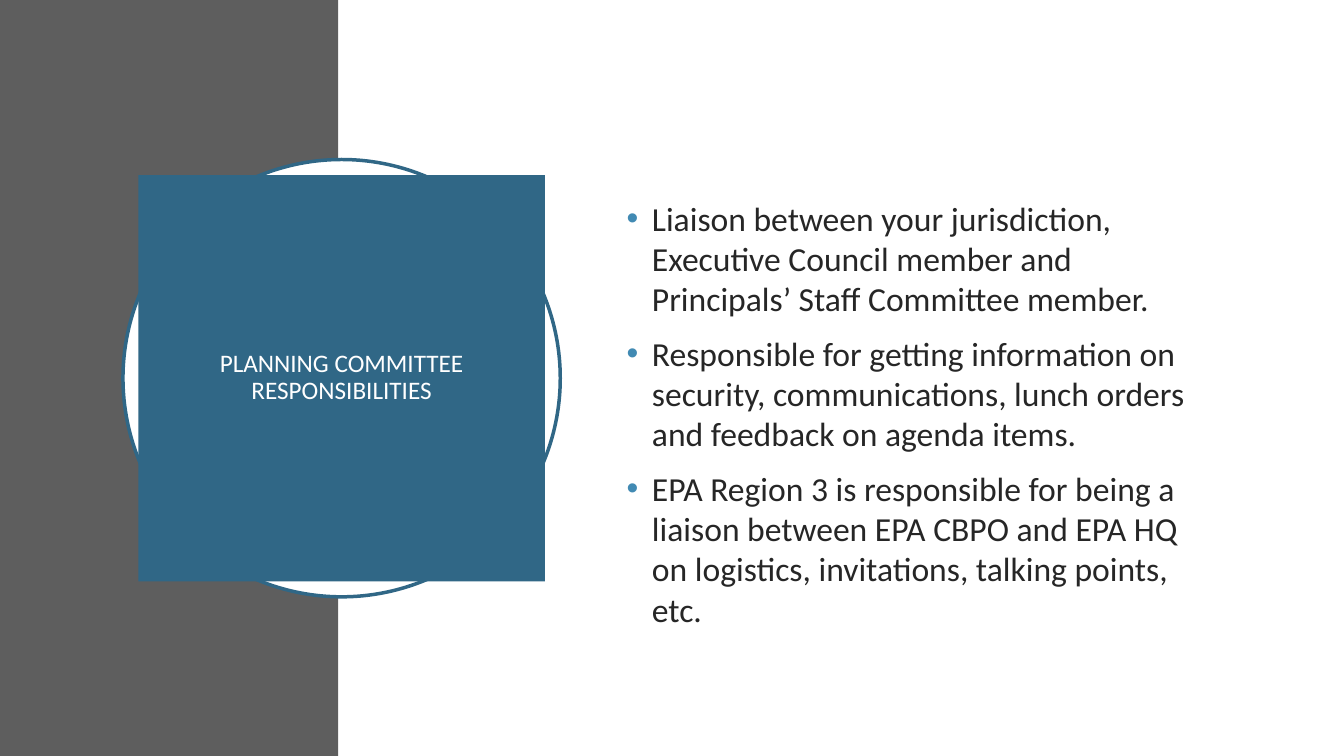
"""Build the planning committee responsibilities slide."""
import pptx
import pptx.util
import pptx.dml.color
import pptx.enum.shapes
import pptx.enum.text
import lxml.etree

Cm, Pt = pptx.util.Cm, pptx.util.Pt
Kind = pptx.enum.shapes.MSO_SHAPE
Align = pptx.enum.text.PP_ALIGN
Fit = pptx.enum.text.MSO_AUTO_SIZE
Mid = pptx.enum.text.MSO_ANCHOR.MIDDLE

TITLE = "PLANNING COMMITTEE RESPONSIBILITIES"
DUTIES = [
    "Liaison between your jurisdiction, Executive Council member and Principals’ Staff Committee member.",
    "Responsible for getting information on security, communications, lunch orders and feedback on agenda items.",
    "EPA Region 3 is responsible for being a liaison between EPA CBPO and EPA HQ on logistics, invitations, talking points, etc.",
]
WIDE, HIGH, BAND = 33.87, 19.05, 8.53
RING, CORE = 11.02, 10.24
MID_X, MID_Y = 8.61, 9.53
BODY = (15.54, 3.89, 14.78, 13.72)
BLUE, WHITE = "306786", "FFFFFF"


def color(code):
    return pptx.dml.color.RGBColor.from_string(code)


def apply(item, form):
    for name, value in form.items():
        setattr(item, name, value)


def center(size):
    return MID_X - size / 2, MID_Y - size / 2, size, size


def place(shape, box):
    apply(shape, dict(zip(("left", "top", "width", "height"), map(Cm, box))))


def paint(shape, fill, line=None):
    shape.fill.solid()
    shape.fill.fore_color.rgb = color(fill)
    if line:
        shape.line.color.rgb = color(line)
        shape.line.width = Pt(2.5)
    else:
        shape.line.fill.background()


def write(shape, lines, pads, size, ink, form):
    frame = shape.text_frame
    frame.text = "\n".join(lines)
    sides = ("margin_left", "margin_top", "margin_right", "margin_bottom")
    apply(frame, dict(zip(sides, map(Cm, pads))))
    apply(frame, {"word_wrap": True, "auto_size": Fit.NONE, "vertical_anchor": Mid})
    for rank, para in enumerate(frame.paragraphs):
        apply(para, {"space_after": Pt(0), "space_before": Pt(10 if rank else 0), **form})
        font = para.runs[0].font
        apply(font, {"name": "Calibri", "size": Pt(size)})
        font.color.rgb = color(ink)


def bullet(para, code):
    props = para._p.get_or_add_pPr()
    props.set("marL", str(Cm(0.64)))
    props.set("indent", str(-Cm(0.64)))
    space = props.nsmap["a"]

    def add(host, tag, **attrs):
        return lxml.etree.SubElement(host, f"{{{space}}}{tag}", **attrs)

    add(add(props, "buClr"), "srgbClr", val=code)
    add(props, "buFont", typeface="Arial")
    add(props, "buChar", char="•")


def main():
    deck = pptx.Presentation()
    apply(deck, {"slide_width": Cm(WIDE), "slide_height": Cm(HIGH)})
    slide = deck.slides.add_slide(deck.slide_layouts[1])
    title, body = slide.placeholders

    decor = [
        (Kind.RECTANGLE, (0, 0, BAND, HIGH), "5E5E5E", None),
        (Kind.RECTANGLE, (BAND, 0, WIDE - BAND, HIGH), WHITE, None),
        (Kind.OVAL, center(RING), WHITE, BLUE),
    ]
    for kind, box, fill, line in decor:
        shape = slide.shapes.add_shape(kind, *map(Cm, box))
        shape.shadow.inherit = False
        paint(shape, fill, line)

    for holder in (title, body):
        slide.shapes._spTree.append(holder._element)

    place(title, center(CORE))
    paint(title, BLUE)
    write(title, [TITLE], [0.51] * 4, 18, WHITE,
          {"alignment": Align.CENTER, "line_spacing": 0.9})

    place(body, BODY)
    write(body, DUTIES, (0.25, 0.13, 0.25, 0.8), 24, "262626",
          {"alignment": Align.LEFT, "line_spacing": 1.0})
    for para in body.text_frame.paragraphs:
        bullet(para, "418AB3")

    deck.save("out.pptx")


if __name__ == "__main__":
    main()
